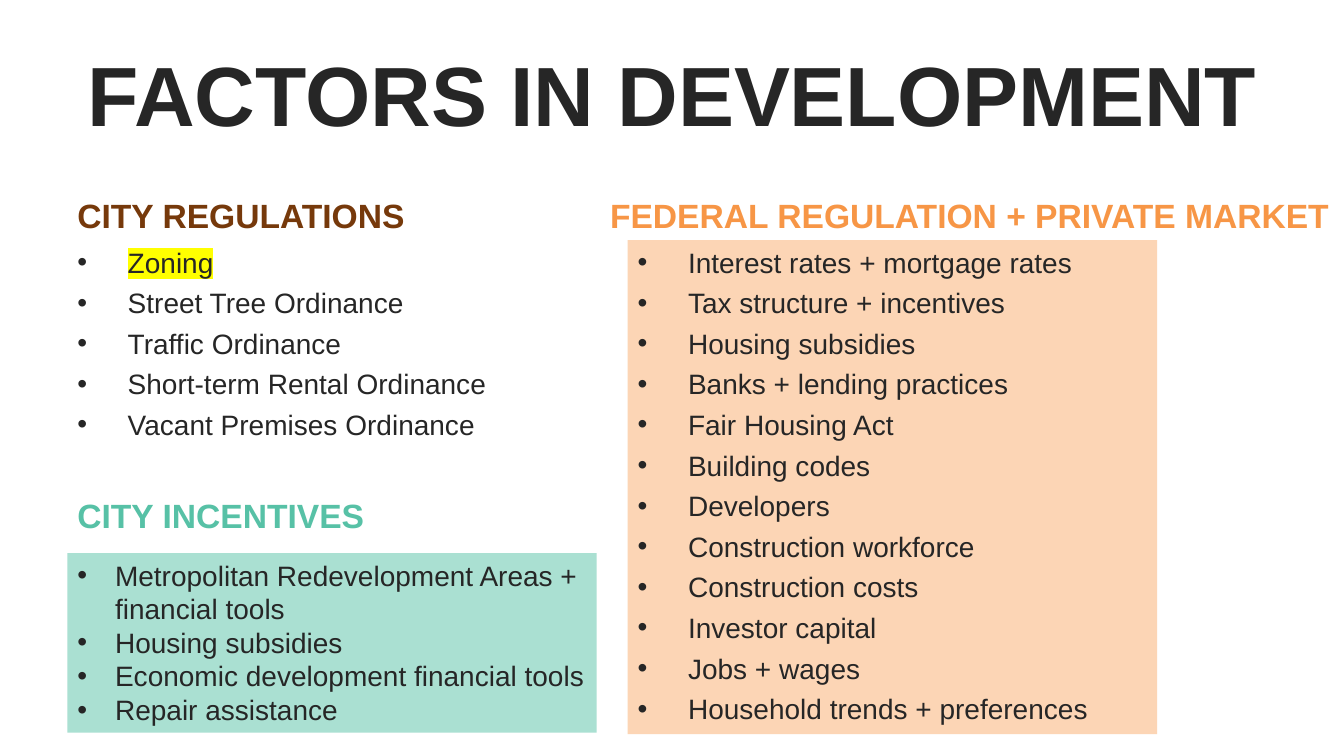
from lxml.etree import SubElement
from pptx import Presentation
from pptx.dml.color import RGBColor
from pptx.enum.text import MSO_ANCHOR, PP_ALIGN
from pptx.oxml.ns import qn
from pptx.util import Cm, Pt

INK = "262626"
LEFT = 1.7
WIDE = 13.34  # width of each list
TOP = 4.27    # top of the upper headings
TALL = 1.78   # height of each heading
BODY = 6.05   # top of the upper lists

RULES = ["Zoning", "Street Tree Ordinance", "Traffic Ordinance",
         "Short-term Rental Ordinance", "Vacant Premises Ordinance"]
MARKET = ["Interest rates + mortgage rates", "Tax structure + incentives",
          "Housing subsidies", "Banks + lending practices",
          "Fair Housing Act", "Building codes", "Developers",
          "Construction workforce", "Construction costs",
          "Investor capital", "Jobs + wages",
          "Household trends + preferences"]
TOOLS = ["Metropolitan Redevelopment Areas + financial tools",
         "Housing subsidies", "Economic development financial tools",
         "Repair assistance"]


def paint(hue):
    return RGBColor.from_string(hue)


def style(para, size, hue, bold=False):
    font = para.font
    font.name = "Arial"
    font.size = Pt(size)
    font.bold = bold
    font.color.rgb = paint(hue)


def add_box(slide, place, anchor=MSO_ANCHOR.TOP):
    box = slide.shapes.add_textbox(*[Cm(n) for n in place])
    box.text_frame.word_wrap = True
    box.text_frame.vertical_anchor = anchor
    return box


def add_head(slide, place, text, size, hue, anchor=MSO_ANCHOR.BOTTOM,
             align=PP_ALIGN.LEFT):
    para = add_box(slide, place, anchor).text_frame.paragraphs[0]
    para.text = text
    para.alignment = align
    style(para, size, hue, True)


def add_list(slide, place, items, indent=1.27, gap=5, fill=None):
    box = add_box(slide, place)
    if fill:
        box.fill.solid()
        box.fill.fore_color.rgb = paint(fill)
    frame = box.text_frame
    for i, item in enumerate(items):
        para = frame.add_paragraph() if i else frame.paragraphs[0]
        para.text = item
        props = para._p.get_or_add_pPr()
        props.set("marL", str(Cm(indent)))
        props.set("indent", str(-Cm(indent)))
        SubElement(props, qn("a:buFont"), typeface="Arial")
        SubElement(props, qn("a:buChar"), char="•")
        if i and gap:
            para.space_before = Pt(gap)
        style(para, 20, INK)
    return frame


def mark(para, hue):
    props = para.runs[0]._r.get_or_add_rPr()
    light = SubElement(props, qn("a:highlight"))
    SubElement(light, qn("a:srgbClr"), val=hue)


def main():
    deck = Presentation()
    deck.slide_width = Cm(33.87)
    deck.slide_height = Cm(19.05)
    slide = deck.slides.add_slide(deck.slide_layouts[6])

    # Title
    add_head(slide, (LEFT, 0.76, 30.48, 3.18), "FACTORS IN DEVELOPMENT",
             60, INK, MSO_ANCHOR.MIDDLE, PP_ALIGN.CENTER)

    # City regulations
    add_head(slide, (LEFT, TOP, WIDE, TALL), "CITY REGULATIONS", 24, "76390B")
    rules = add_list(slide, (LEFT, BODY, WIDE, 6.43), RULES)
    mark(rules.paragraphs[0], "FFFF00")

    # Federal regulation and private market
    add_head(slide, (15.01, TOP, 18.85, TALL),
             "FEDERAL REGULATION + PRIVATE MARKET", 24, "F79646",
             align=PP_ALIGN.CENTER)
    add_list(slide, (15.82, BODY, WIDE, 12.45), MARKET, fill="FCD5B5")

    # City incentives
    add_head(slide, (LEFT, 11.84, WIDE, TALL), "CITY INCENTIVES", 24, "57C1A6")
    add_list(slide, (LEFT, 13.94, WIDE, 4.52), TOOLS, 0.95, 0, "AAE0D2")

    deck.save("out.pptx")


if __name__ == "__main__":
    main()
